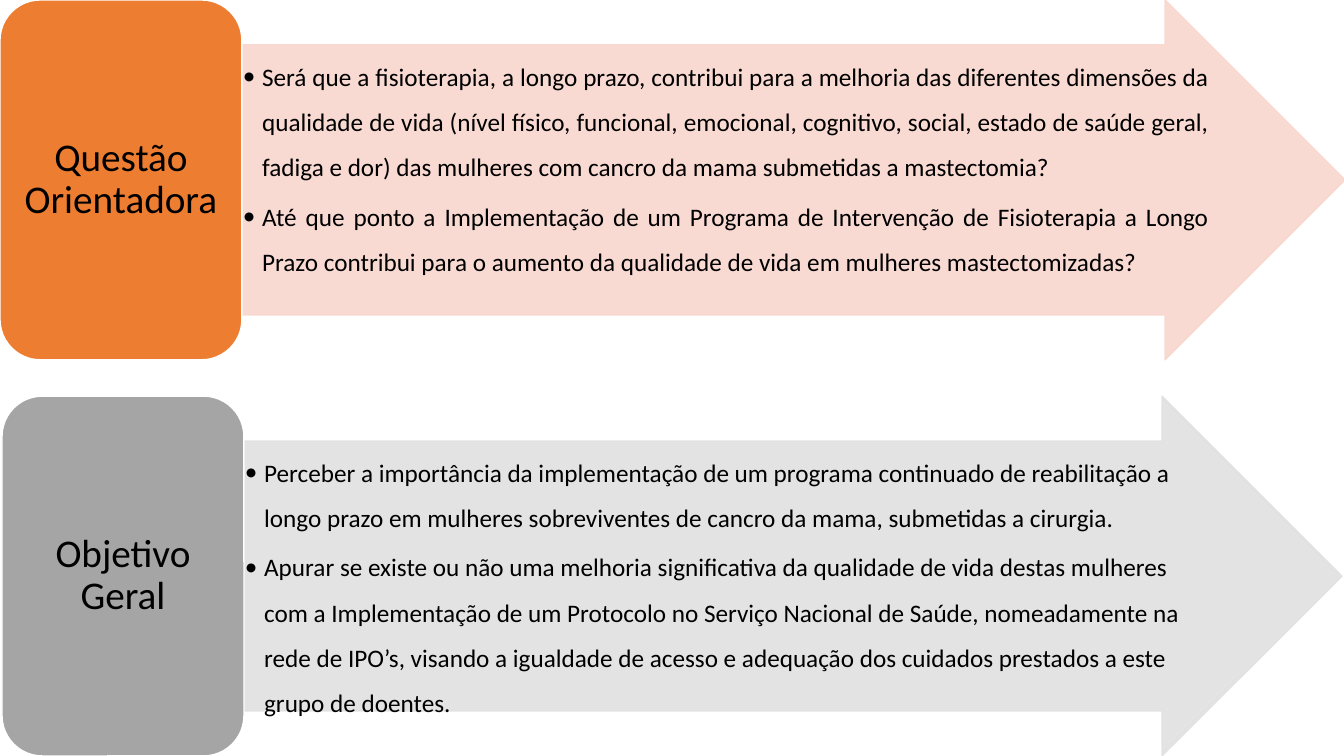
from lxml import etree
from pptx import Presentation
from pptx.dml.color import RGBColor
from pptx.enum.shapes import MSO_SHAPE
from pptx.enum.text import MSO_ANCHOR, PP_ALIGN
from pptx.oxml.ns import qn
from pptx.util import Inches, Pt

ARROW, ROUNDED = MSO_SHAPE.RIGHT_ARROW, MSO_SHAPE.ROUNDED_RECTANGLE
TOP, MIDDLE = MSO_ANCHOR.TOP, MSO_ANCHOR.MIDDLE
LEFT, CENTER, JUSTIFY = PP_ALIGN.LEFT, PP_ALIGN.CENTER, PP_ALIGN.JUSTIFY

FONT = "Calibri"
PAGE_WIDTH, PAGE_HEIGHT = 13.33, 7.5
ROW_HEIGHT = 3.57
ROW_STEP = PAGE_HEIGHT - ROW_HEIGHT
LABEL_WIDTH = 2.4
BULLET_INDENT = 0.19

ROWS = [
    {
        "left": 0, "arrow_width": 10.94, "align": JUSTIFY,
        "label": "Questão Orientadora", "label_color": "ED7D31", "arrow_color": "F8D7CE",
        "points": [
            "Será que a fisioterapia, a longo prazo, contribui para a melhoria das diferentes "
            "dimensões da qualidade de vida (nível físico, funcional, emocional, cognitivo, "
            "social, estado de saúde geral, fadiga e dor) das mulheres com cancro da mama "
            "submetidas a mastectomia?",
            "Até que ponto a Implementação de um Programa de Intervenção de Fisioterapia a "
            "Longo Prazo contribui para o aumento da qualidade de vida em mulheres "
            "mastectomizadas?",
        ],
    },
    {
        "left": 0.02, "arrow_width": 10.89, "align": LEFT,
        "label": "Objetivo Geral", "label_color": "A5A5A5", "arrow_color": "E1E1E1",
        "points": [
            "Perceber a importância da implementação de um programa continuado de reabilitação "
            "a longo prazo em mulheres sobreviventes de cancro da mama, submetidas a cirurgia.",
            "Apurar se existe ou não uma melhoria significativa da qualidade de vida destas "
            "mulheres com a Implementação de um Protocolo no Serviço Nacional de Saúde, "
            "nomeadamente na rede de IPO’s, visando a igualdade de acesso e adequação dos "
            "cuidados prestados a este grupo de doentes.",
        ],
    },
]


def rgb(value):
    """Turn a hex string into a colour."""
    return RGBColor.from_string(value)


def add_block(page, kind, left, top, width, fill, line):
    """Add a filled shape one row high."""
    block = page.shapes.add_shape(
        kind, Inches(left), Inches(top), Inches(width), Inches(ROW_HEIGHT))
    block.shadow.inherit = False
    block.fill.solid()
    block.fill.fore_color.rgb = rgb(fill)
    block.line.color.rgb = rgb(line)
    block.line.width = Pt(1)
    return block


def set_opacity(block, percent):
    """Make the fill and line of a shape partly transparent."""
    for color in block._element.spPr.iter(qn("a:srgbClr")):
        etree.SubElement(color, qn("a:alpha"), val=str(percent * 1000))


def write_text(block, texts, anchor, insets, align, size, line_spacing, space_after):
    """Write paragraphs in one style and return them."""
    frame = block.text_frame
    frame.word_wrap = True
    frame.vertical_anchor = anchor
    frame.margin_left, frame.margin_top, frame.margin_right, frame.margin_bottom = (
        Inches(inset) for inset in insets)
    frame.text = "\n".join(texts)
    for para in frame.paragraphs:
        para.alignment = align
        para.line_spacing = line_spacing
        para.space_after = Pt(space_after)
        para.font.name = FONT
        para.font.size = Pt(size)
        para.font.color.rgb = rgb("000000")
    return frame.paragraphs


def add_bullet(para):
    """Give a paragraph a hanging round bullet."""
    properties = para._p.get_or_add_pPr()
    properties.set("marL", str(Inches(BULLET_INDENT)))
    properties.set("indent", str(-Inches(BULLET_INDENT)))
    text_defaults = properties.find(qn("a:defRPr"))
    text_defaults.addprevious(etree.Element(qn("a:buFont"), typeface=FONT))
    text_defaults.addprevious(etree.Element(qn("a:buChar"), char="•"))


def add_arrow(page, row, top):
    """Add the pale arrow with its bulleted points."""
    color = row["arrow_color"]
    arrow = add_block(
        page, ARROW, row["left"] + LABEL_WIDTH, top, row["arrow_width"], color, color)
    arrow.adjustments[0] = 0.75
    set_opacity(arrow, 90)
    insets = (0.01, 0.01, 0.01, 0.01)
    for para in write_text(arrow, row["points"], TOP, insets, row["align"], 18, 1.5, 2.7):
        add_bullet(para)


def add_label(page, row, top):
    """Add the rounded label at the start of a row."""
    label = add_block(
        page, ROUNDED, row["left"], top, LABEL_WIDTH, row["label_color"], "FFFFFF")
    insets = (0.12, 0.06, 0.12, 0.06)
    write_text(label, [row["label"]], MIDDLE, insets, CENTER, 28, 0.9, 9.8)


def main():
    """Build the slide and save it."""
    deck = Presentation()
    deck.slide_width, deck.slide_height = Inches(PAGE_WIDTH), Inches(PAGE_HEIGHT)
    page = deck.slides.add_slide(deck.slide_layouts[6])
    for index, row in enumerate(ROWS):
        add_arrow(page, row, index * ROW_STEP)
        add_label(page, row, index * ROW_STEP)
    deck.save("out.pptx")


if __name__ == "__main__":
    main()
